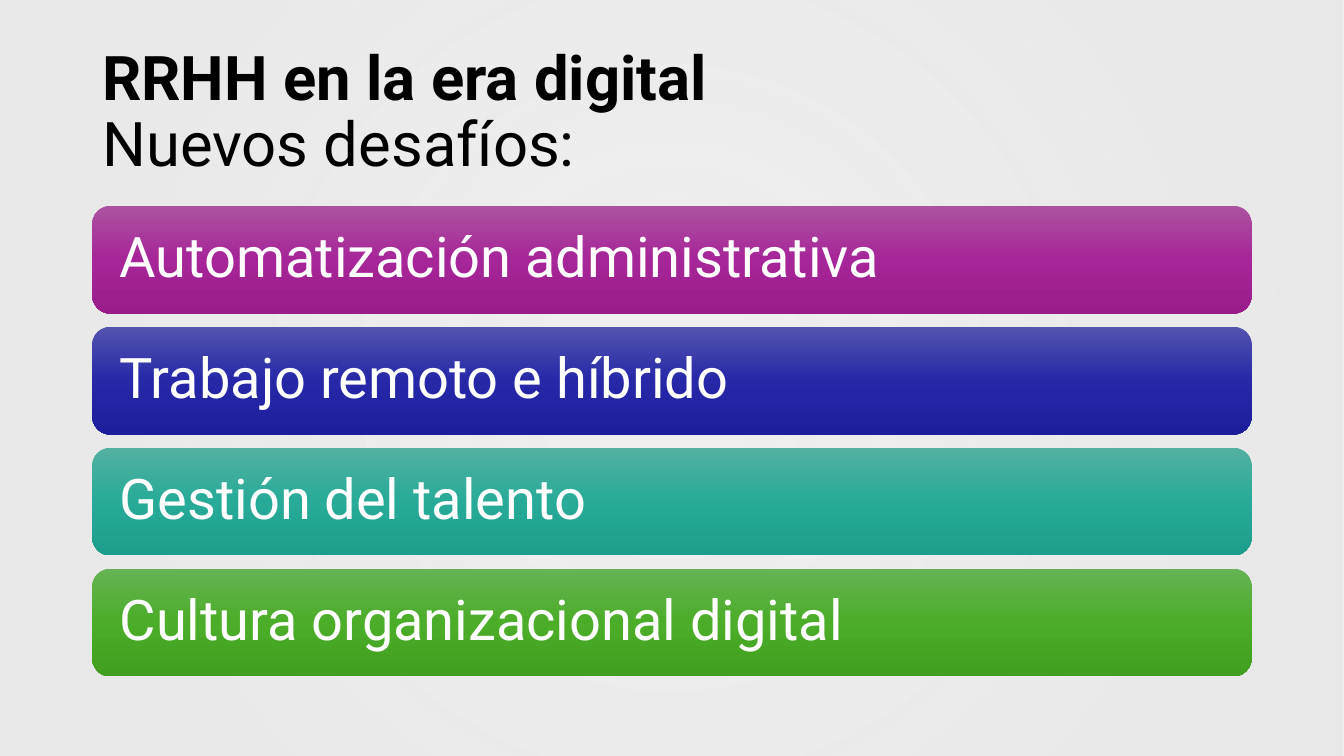
import pptx
import pptx.util
import pptx.dml.color
import pptx.enum.shapes
import pptx.enum.text
import pptx.oxml
import pptx.oxml.ns

Pt = pptx.util.Pt
WIDTH, HEIGHT = 960, 540
MARGIN, CONTENT_WIDTH = 66, 828
FIRST_TOP, BAR_HEIGHT, BAR_PITCH = 147, 77, 86.4

CHALLENGES = [
    ("Automatización administrativa", ("AC53A0", "A62598", "991C8B")),
    ("Trabajo remoto e híbrido", ("5354AE", "2628A8", "1D1E9B")),
    ("Gestión del talento", ("53B0A1", "27AB98", "1D9D8B")),
    ("Cultura organizacional digital", ("66B354", "4BAD28", "409F1E")),
]

RADIAL = (
    '<a:path path="circle">'
    '<a:fillToRect l="50000" t="50000" r="50000" b="50000"/></a:path>'
)
DOWNWARD = '<a:lin ang="5400000" scaled="0"/>'


def color(value):
    return pptx.dml.color.RGBColor.from_string(value)


def apply(target, values):
    for key, value in values.items():
        setattr(target, key, value)


class ChallengeSlide:
    font_name = "Roboto"
    frame_format = {
        "word_wrap": True,
        "vertical_anchor": pptx.enum.text.MSO_ANCHOR.MIDDLE,
    }
    paragraph_format = {
        "alignment": pptx.enum.text.PP_ALIGN.LEFT,
        "line_spacing": 0.9,
    }

    def __init__(self, slide):
        self.shapes = slide.shapes

    def gradient_shape(self, kind, box, stops, direction):
        panel = self.shapes.add_shape(kind, *map(Pt, box))
        panel.shadow.inherit = False
        panel.line.fill.background()
        panel.fill.gradient()
        stop_xml = "".join(
            f'<a:gs pos="{position * 1000}"><a:srgbClr val="{tone}">'
            f'<a:alpha val="{opacity * 1000}"/></a:srgbClr></a:gs>'
            for position, tone, opacity in stops
        )
        gradient = pptx.oxml.parse_xml(
            f'<a:gradFill {pptx.oxml.ns.nsdecls("a")} rotWithShape="1">'
            f"<a:gsLst>{stop_xml}</a:gsLst>{direction}</a:gradFill>"
        )
        properties = panel._element.spPr
        properties.replace(
            properties.find(pptx.oxml.ns.qn("a:gradFill")), gradient
        )
        return panel

    def set_lines(self, frame, lines, size, tone):
        apply(frame, self.frame_format)
        paragraph = frame.paragraphs[0]
        apply(paragraph, self.paragraph_format)
        for index, (words, bold) in enumerate(lines):
            if index:
                paragraph.add_line_break()
            run = paragraph.add_run()
            run.text = words
            apply(run.font, {"name": self.font_name, "size": Pt(size), "bold": bold})
            run.font.color.rgb = color(tone)

    def backdrop(self):
        self.gradient_shape(
            pptx.enum.shapes.MSO_SHAPE.RECTANGLE,
            (0, 0, WIDTH, HEIGHT),
            [(10, "E8E8E8", 68), (85, "E8E8E8", 97)],
            RADIAL,
        )

    def heading(self, lines):
        title = self.shapes.add_textbox(
            *map(Pt, (MARGIN, 28.75, CONTENT_WIDTH, 104.4))
        )
        self.set_lines(title.text_frame, lines, 44, "000000")

    def challenge(self, row, words, tones):
        bar = self.gradient_shape(
            pptx.enum.shapes.MSO_SHAPE.ROUNDED_RECTANGLE,
            (MARGIN, FIRST_TOP + row * BAR_PITCH, CONTENT_WIDTH, BAR_HEIGHT),
            [(50 * step, tone, 100) for step, tone in enumerate(tones)],
            DOWNWARD,
        )
        inset = Pt(15.75)
        apply(bar.text_frame, {
            "margin_left": inset,
            "margin_right": inset,
            "margin_top": inset,
            "margin_bottom": inset,
        })
        self.set_lines(bar.text_frame, [(words, False)], 40, "FFFFFF")


def main():
    deck = pptx.Presentation()
    apply(deck, {"slide_width": Pt(WIDTH), "slide_height": Pt(HEIGHT)})
    page = ChallengeSlide(deck.slides.add_slide(deck.slide_layouts[6]))
    page.backdrop()
    page.heading([("RRHH en la era digital", True), ("Nuevos desafíos:", False)])
    for row, (words, tones) in enumerate(CHALLENGES):
        page.challenge(row, words, tones)
    deck.save("out.pptx")


if __name__ == "__main__":
    main()
